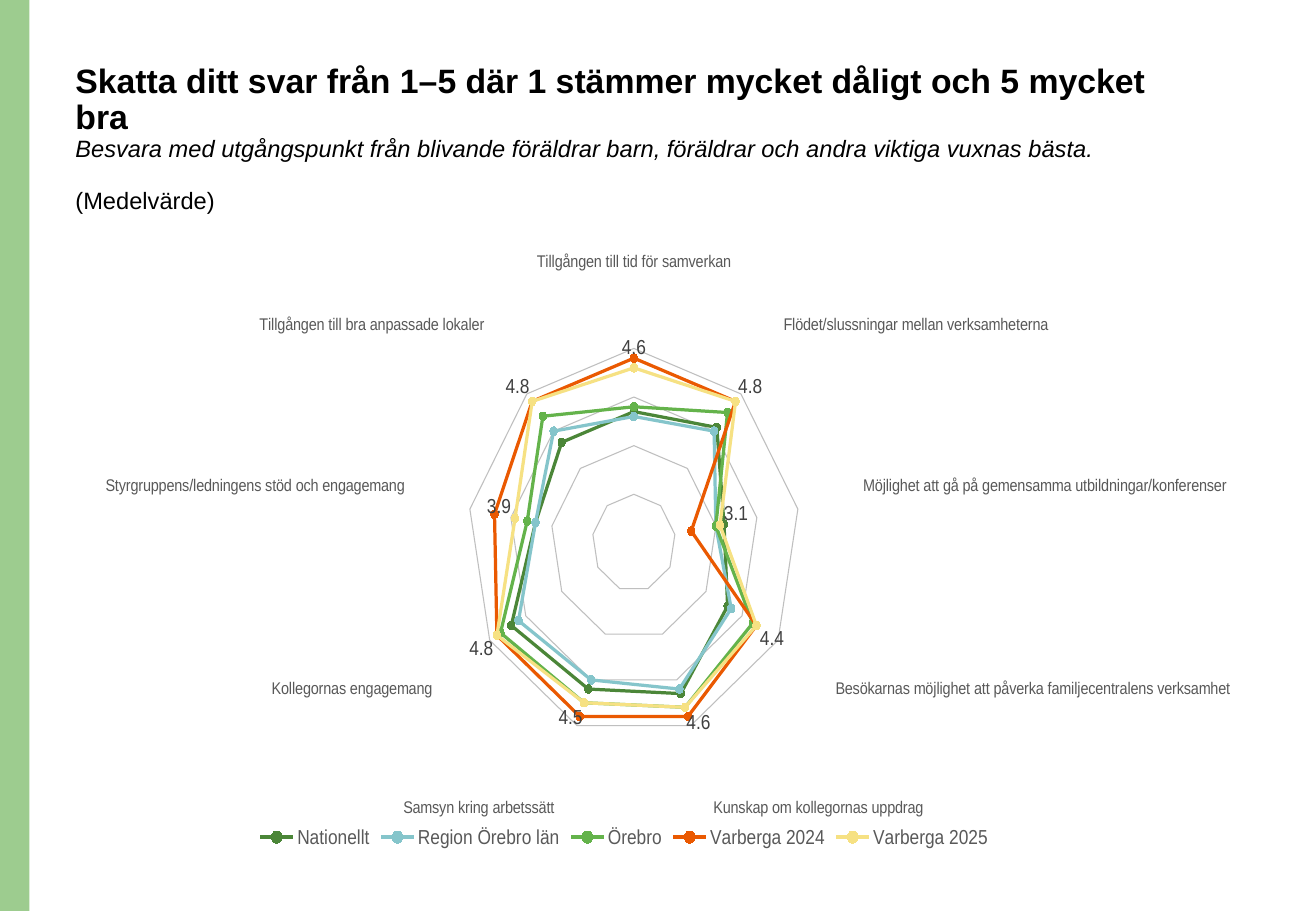
from lxml import etree
from pptx import Presentation
from pptx.chart.data import CategoryChartData
from pptx.dml.color import RGBColor
from pptx.enum.chart import (XL_CHART_TYPE as ChartType, XL_LEGEND_POSITION as LegendPos,
                             XL_MARKER_STYLE as Marker, XL_TICK_MARK as Tick)
from pptx.enum.shapes import MSO_SHAPE as Shape
from pptx.enum.text import MSO_ANCHOR as Anchor, MSO_AUTO_SIZE as AutoSize, PP_ALIGN as Align
from pptx.oxml.ns import qn
from pptx.util import Pt

FONT = "Arial"
GREY = "595959"

CATEGORIES = [
    "Tillgången till tid för samverkan",
    "Tillgången till bra anpassade lokaler",
    "Styrgruppens/ledningens stöd och engagemang",
    "Kollegornas engagemang",
    "Samsyn kring arbetssätt",
    "Kunskap om kollegornas uppdrag",
    "Besökarnas möjlighet att påverka familjecentralens verksamhet",
    "Möjlighet att gå på gemensamma utbildningar/konferenser",
    "Flödet/slussningar mellan verksamheterna",
]
SERIES = [
    ("Nationellt", "4B8638", [3.7, 3.7, 3.4, 4.4, 4.2, 4.3, 3.6, 3.2, 4.1]),
    ("Region Örebro län", "85C5CB", [3.6, 4, 3.4, 4.2, 4, 4.2, 3.7, 3, 4]),
    ("Örebro", "64B34B", [3.8, 4.4, 3.6, 4.7, 4.5, 4.6, 4.3, 3, 4.5]),
    ("Varberga 2024", "EA5901", [4.8, 4.8, 4.4, 4.8, 4.8, 4.8, 4.4, 2.4, 4.8]),
    ("Varberga 2025", "F6E183", [4.6, 4.8, 3.9, 4.8, 4.5, 4.6, 4.4, 3.1, 4.8]),
]


def rgb(color):
    return RGBColor.from_string(color)


def set_font(font, size, color="000000", bold=False, italic=False):
    font.name, font.size = FONT, Pt(size)
    font.bold, font.italic = bold, italic
    font.color.rgb = rgb(color)


def set_line(line, color, width):
    line.color.rgb = rgb(color)
    line.width = Pt(width)


def add_text(p, text, size, before=0, **fmt):
    p.alignment = Align.LEFT
    p.line_spacing = 0.9
    p.space_before = Pt(before)
    r = p.add_run()
    r.text = text
    set_font(r.font, size, **fmt)


def add_side_band(s, color):
    sp = s.shapes.add_shape(Shape.RECTANGLE, 0, 0, Pt(17.5), Pt(540))
    sp.shadow.inherit = False
    sp.fill.solid()
    sp.fill.fore_color.rgb = rgb(color)
    sp.line.fill.background()


def fill_title(s):
    sp = s.shapes.title
    sp.left, sp.top, sp.width, sp.height = Pt(37.5), Pt(34.5), Pt(672.5), Pt(78)
    tf = sp.text_frame
    tf.word_wrap = True
    tf.auto_size = AutoSize.NONE
    tf.vertical_anchor = Anchor.TOP
    add_text(tf.paragraphs[0],
             "Skatta ditt svar från 1–5 där 1 stämmer mycket dåligt och 5 mycket bra",
             20, bold=True)
    add_text(tf.add_paragraph(),
             "Besvara med utgångspunkt från blivande föräldrar barn, "
             "föräldrar och andra viktiga vuxnas bästa.", 14, italic=True)
    add_text(tf.add_paragraph(), "(Medelvärde)", 14, before=15.5)


def place_plot(chart, x, y, w, h):
    """Fix the inner plot area, in fractions of the chart."""
    area = chart._chartSpace.chart.plotArea
    for old in area.findall(qn("c:layout")):
        area.remove(old)
    layout = etree.Element(qn("c:layout"))
    area.insert(0, layout)
    manual = etree.SubElement(layout, qn("c:manualLayout"))
    values = [("layoutTarget", "inner"), ("xMode", "edge"), ("yMode", "edge"),
              ("x", x), ("y", y), ("w", w), ("h", h)]
    for tag, value in values:
        etree.SubElement(manual, qn(f"c:{tag}")).set("val", str(value))


def format_axes(chart):
    cat = chart.category_axis
    cat.reverse_order = True
    cat.major_tick_mark = cat.minor_tick_mark = Tick.NONE
    cat.has_major_gridlines = True
    set_line(cat.major_gridlines.format.line, "D9D9D9", 0.75)
    set_line(cat.format.line, "000000", 0.75)
    set_font(cat.tick_labels.font, 10, GREY)

    val = chart.value_axis
    val.visible = False
    val.minimum_scale, val.maximum_scale, val.major_unit = 1, 5.9, 1
    val.has_major_gridlines = True
    set_line(val.major_gridlines.format.line, "BFBFBF", 0)


def format_series(series, color):
    series.smooth = False
    set_line(series.format.line, color, 2.25)
    series.marker.style, series.marker.size = Marker.CIRCLE, 5
    series.marker.format.fill.solid()
    series.marker.format.fill.fore_color.rgb = rgb(color)
    set_line(series.marker.format.line, color, 0.75)


def add_value_labels(series):
    labels = series.data_labels
    labels.show_value = True
    labels.number_format, labels.number_format_is_linked = "#,##0.0", False
    set_font(labels.font, 12, "404040")


def add_radar(s):
    data = CategoryChartData(number_format="0.0")
    data.categories = CATEGORIES
    for name, _, values in SERIES:
        data.add_series(name, values)
    chart = s.shapes.add_chart(ChartType.RADAR_MARKERS, Pt(62.5), Pt(134.5),
                               Pt(672.5), Pt(371), data).chart
    set_font(chart.font, 10)
    chart.has_title = False
    chart.has_legend = True
    chart.legend.position = LegendPos.BOTTOM
    chart.legend.include_in_layout = False
    set_font(chart.legend.font, 12, GREY)
    place_plot(chart, 0.3, 0.1, 0.42, 0.81)
    format_axes(chart)

    plot = chart.plots[0]
    plot.vary_by_categories = False
    for series, (_, color, _) in zip(plot.series, SERIES):
        format_series(series, color)
    add_value_labels(plot.series[-1])


def main():
    prs = Presentation()
    prs.slide_width, prs.slide_height = Pt(780), Pt(540)
    s = prs.slides.add_slide(prs.slide_layouts[5])
    add_side_band(s, "9DCC8F")
    fill_title(s)
    add_radar(s)
    prs.save("out.pptx")


if __name__ == "__main__":
    main()
